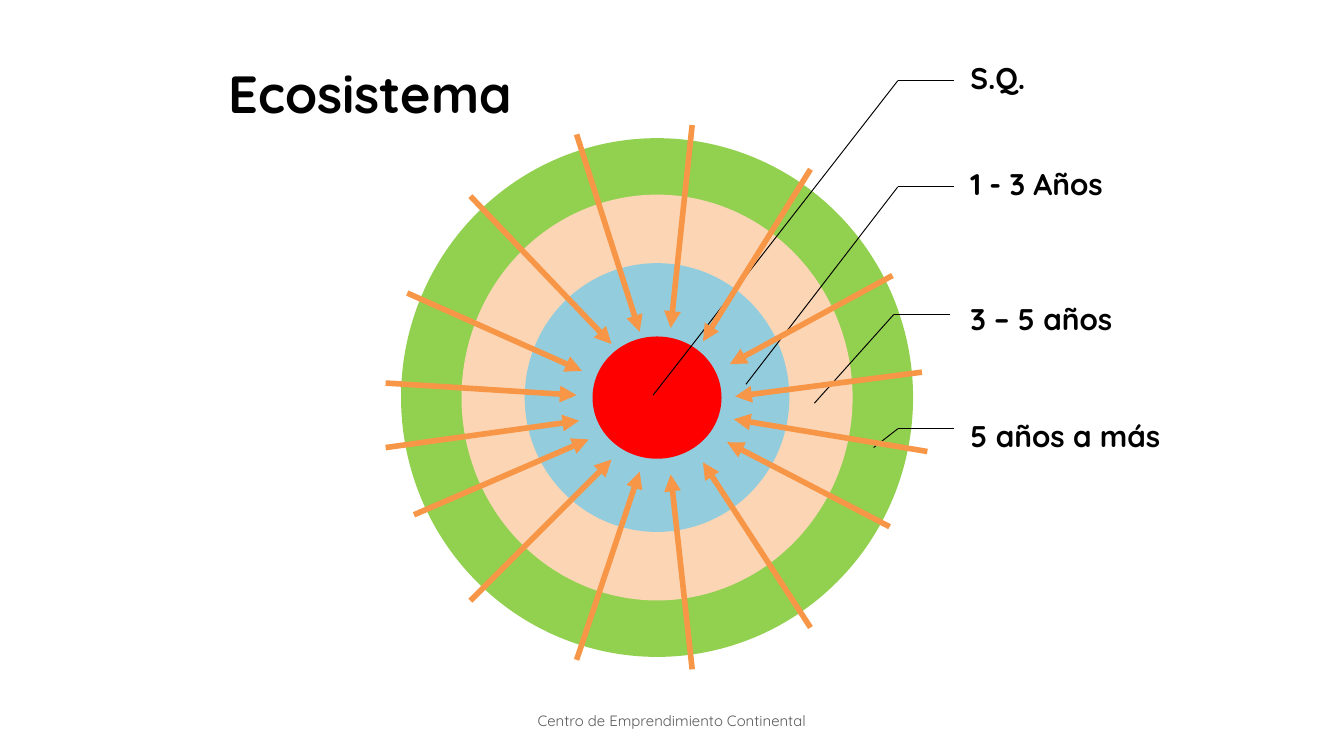
import pptx
import pptx.util
import pptx.dml.color
import pptx.enum.shapes
import pptx.enum.text
import pptx.oxml.ns
from lxml import etree

Pt = pptx.util.Pt
ANCHOR = pptx.enum.text.MSO_ANCHOR
ALIGN = pptx.enum.text.PP_ALIGN

FONT = "Quicksand"
CENTER = (352, 213)
RINGS = [  # width, height, colour
    (274.3, 277.9, "92D050"),
    (209.5, 217.4, "FCD5B5"),
    (141.8, 144, "93CDDD"),
    (69.1, 65.5, "FF0000"),
]
LABEL_LEFT, LABEL_W, LABEL_H = 511.2, 118.8, 56.9
LABELS = [  # text, top, elbow of the leader, its tip in the ring
    ("S.Q.", 14.4, (481, 43.2), (349.9, 211.7)),
    ("1 - 3 Años", 71.3, (481, 100.1), (399.6, 205.9)),
    ("3 – 5 años", 143.3, (478.8, 168.5), (436.3, 216)),
    ("5 años a más", 205.9, (481, 229.7), (468, 239.8)),
]
LEADER_RUN = 30
ARROWS = [  # outer end, head
    ((206.6, 239.8), (310.3, 225.4)),
    ((221.8, 275.8), (315.4, 235.4)),
    ((252, 321.8), (327.6, 246.2)),
    ((308.9, 353.5), (342.7, 252.7)),
    ((370.8, 358.6), (359.3, 254.2)),
    ((434.2, 336.2), (376.6, 247.7)),
    ((476.6, 282.2), (389.5, 236.9)),
    ((493.9, 199.4), (393.8, 212.4)),
    ((206.6, 205.2), (308.9, 211.7)),
    ((218.2, 157), (311.8, 198.7)),
    ((252, 105.1), (327.6, 184.3)),
    ((308.9, 72), (342.7, 177.8)),
    ((370.8, 67), (359.3, 175.7)),
    ((434.2, 90.7), (376.6, 182.9)),
    ((478.1, 147.6), (391, 195.1)),
    ((496.8, 241.9), (393.1, 224.6)),
]


def rgb(value):
    return pptx.dml.color.RGBColor.from_string(value)


def add_ring(s, width, height, color):
    x, y = CENTER
    sp = s.shapes.add_shape(
        pptx.enum.shapes.MSO_SHAPE.OVAL,
        Pt(x - width / 2), Pt(y - height / 2), Pt(width), Pt(height))
    sp.shadow.inherit = False
    sp.fill.solid()
    sp.fill.fore_color.rgb = rgb(color)
    sp.line.fill.background()


def add_line(s, start, end, color, width, arrow=False):
    line = s.shapes.add_connector(
        pptx.enum.shapes.MSO_CONNECTOR.STRAIGHT,
        *(Pt(v) for v in (*start, *end)))
    line.line.color.rgb = rgb(color)
    line.line.width = Pt(width)
    qn = pptx.oxml.ns.qn
    if arrow:
        ln = line.line._get_or_add_ln()
        etree.SubElement(ln, qn("a:tailEnd"), type="triangle")
    etree.SubElement(line._element.spPr, qn("a:effectLst"))


def add_text(s, text, box, size, color="000000", bold=False,
             align=ALIGN.CENTER, anchor=ANCHOR.MIDDLE, insets=(7.2, 3.6, 7.2, 3.6)):
    """Insets run left, top, right, bottom."""
    tf = s.shapes.add_textbox(*(Pt(v) for v in box)).text_frame
    tf.word_wrap = True
    tf.vertical_anchor = anchor
    tf.margin_left, tf.margin_top, tf.margin_right, tf.margin_bottom = map(Pt, insets)
    p = tf.paragraphs[0]
    p.text = text
    p.alignment = align
    p.font.name = FONT
    p.font.size = Pt(size)
    p.font.bold = bold
    p.font.color.rgb = rgb(color)
    return p


def add_label(s, text, top, elbow, tip):
    """Ring label with its bent leader."""
    p = add_text(s, text, (LABEL_LEFT, top, LABEL_W, LABEL_H), 16, bold=True,
                 align=ALIGN.LEFT, insets=(8.6, 1.4, 1.4, 1.4))
    p.line_spacing = 0.9
    add_line(s, elbow, (elbow[0] + LEADER_RUN, elbow[1]), "000000", 0.5)
    add_line(s, elbow, tip, "000000", 0.5)


def main():
    prs = pptx.Presentation()
    prs.slide_width, prs.slide_height = Pt(720), Pt(405)
    s = prs.slides.add_slide(prs.slide_layouts[6])
    for ring in RINGS:
        add_ring(s, *ring)
    for label in LABELS:
        add_label(s, *label)
    add_text(s, "Centro de Emprendimiento Continental",
             (238.3, 375.1, 243.4, 21.6), 8, color="595959")
    add_text(s, "Ecosistema", (90, 29.5, 216.7, 41), 28, bold=True, anchor=ANCHOR.TOP)
    for start, head in ARROWS:
        add_line(s, start, head, "F79646", 3, arrow=True)
    prs.save("out.pptx")


if __name__ == "__main__":
    main()
